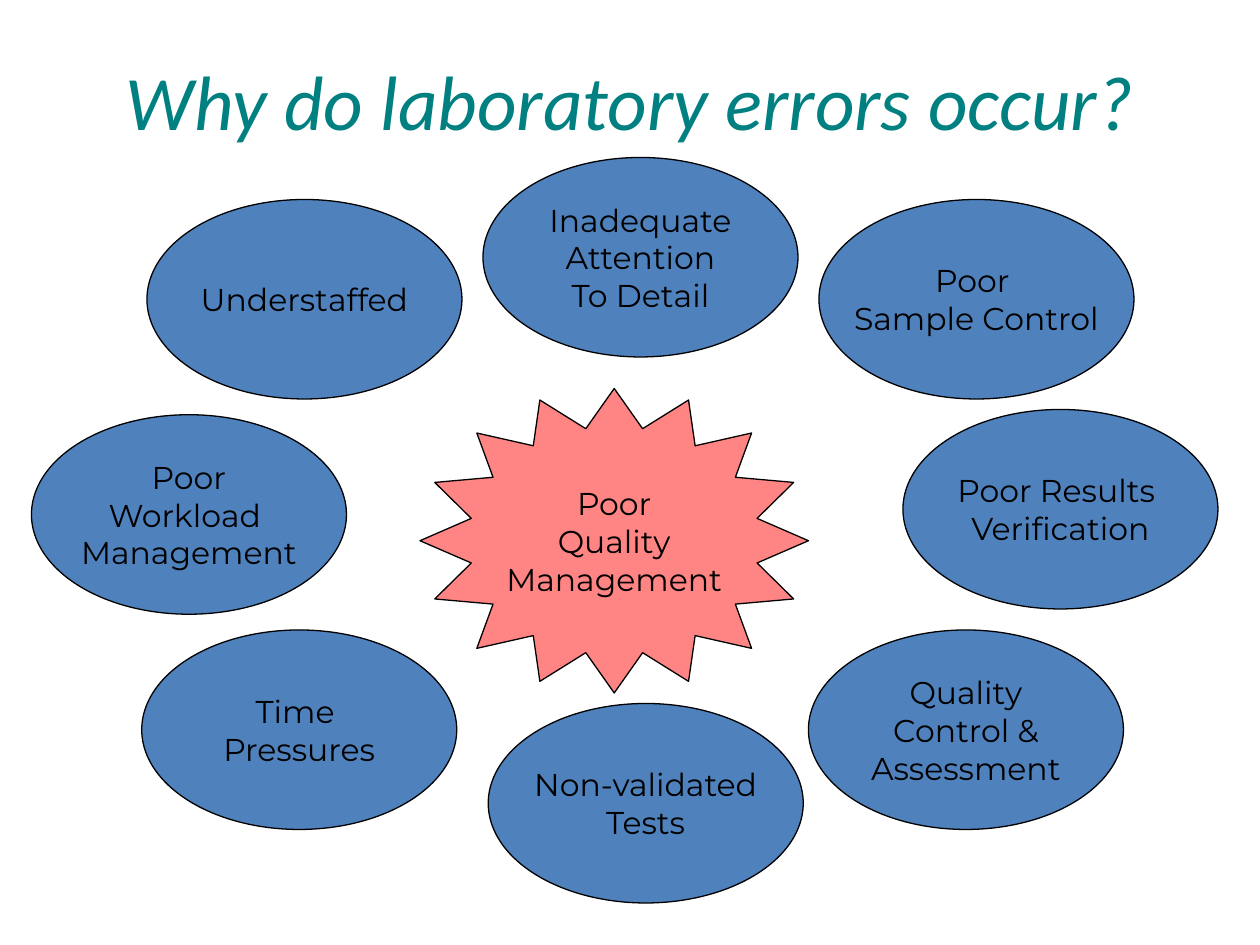
from lxml import etree
from pptx import Presentation, util as u
from pptx.dml.color import RGBColor
from pptx.enum import shapes, text
from pptx.oxml.ns import qn

COLORS = {"title": "008080", "cause": "4F81BD", "core": "FF0000", "ink": "000000"}
COLUMNS, ROWS = 120, 90
CAUSE_SIZE = (30, 19)
CAUSES = [
    (77, 60, "Quality\nControl &\nAssessment"),
    (3, 39.5, "Poor\nWorkload \nManagement"),
    (14, 19, "Understaffed"),
    (46.5, 67, "Non-validated\nTests"),
    (46, 15, "Inadequate\nAttention\nTo Detail"),
    (13.5, 60, "Time \nPressures"),
    (86, 39, "Poor Results \nVerification"),
    (78, 19, "Poor \nSample Control"),
]


class ErrorsSlide:
    body_font, body_size = "Montserrat", 18
    title_font, title_size = "Calibri", 44
    outline = 0.75

    def __init__(self, deck):
        self.slide = deck.slides.add_slide(deck.slide_layouts[6])
        self.column = deck.slide_width / COLUMNS
        self.row = deck.slide_height / ROWS

    def place(self, left, top, width, height):
        return [round(n) for n in (left * self.column, top * self.row,
                                   width * self.column, height * self.row)]

    def label(self, frame, wording, font, size, color, italic=False):
        frame.vertical_anchor = text.MSO_ANCHOR.MIDDLE
        frame.text = wording
        for line in frame.paragraphs:
            line.alignment = text.PP_ALIGN.CENTER
            line.font.name = font
            line.font.size = u.Pt(size)
            line.font.italic = italic
            line.font.color.rgb = RGBColor.from_string(COLORS[color])

    def title(self, wording, *area):
        frame = self.slide.shapes.add_textbox(*self.place(*area)).text_frame
        frame.word_wrap = True
        self.label(frame, wording, self.title_font, self.title_size, "title", True)

    def bubble(self, preset, wording, color, *area, opacity=100):
        bubble = self.slide.shapes.add_shape(preset, *self.place(*area))
        bubble.shadow.inherit = False
        bubble.fill.solid()
        bubble.fill.fore_color.rgb = RGBColor.from_string(COLORS[color])
        if opacity < 100:
            shade = bubble.element.spPr.find(".//" + qn("a:srgbClr"))
            etree.SubElement(shade, qn("a:alpha"), val=str(opacity * 1000))
        bubble.line.color.rgb = RGBColor.from_string(COLORS["ink"])
        bubble.line.width = u.Pt(self.outline)
        bubble.text_frame.word_wrap = False
        self.label(bubble.text_frame, wording, self.body_font, self.body_size, "ink")


def main():
    deck = Presentation()
    deck.slide_width, deck.slide_height = u.Inches(10), u.Inches(7.5)
    errors = ErrorsSlide(deck)
    errors.title("Why do laboratory errors occur?", 6, 4, 108, 11)
    for left, top, wording in CAUSES:
        errors.bubble(shapes.MSO_SHAPE.OVAL, wording, "cause", left, top, *CAUSE_SIZE)
    errors.bubble(shapes.MSO_SHAPE.STAR_16_POINT, "Poor\nQuality\nManagement", "core",
                  40, 37, 37, 29, opacity=48)
    deck.save("out.pptx")


if __name__ == "__main__":
    main()
